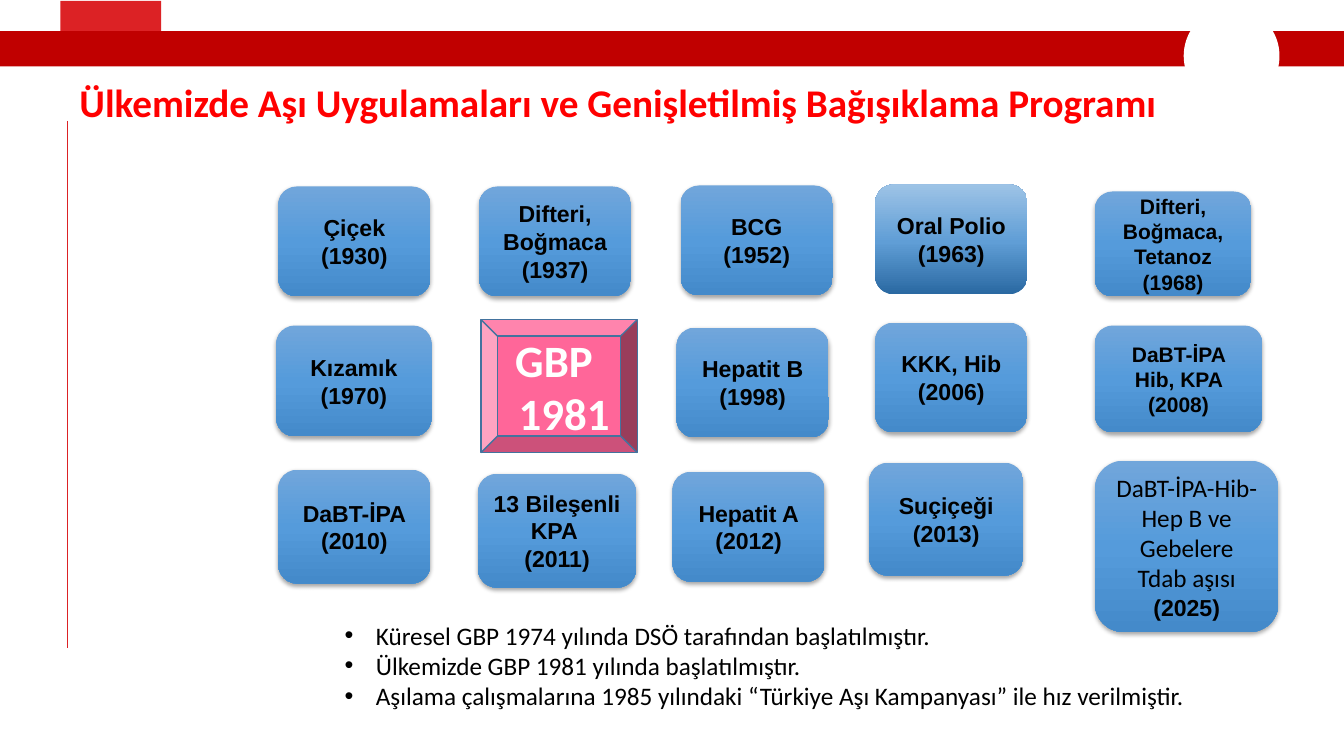
from lxml import etree
from pptx import Presentation
from pptx.dml.color import RGBColor
from pptx.enum.shapes import MSO_CONNECTOR as LINE, MSO_SHAPE as GEOM
from pptx.enum.text import MSO_ANCHOR as ANCHOR, MSO_AUTO_SIZE as AUTO, PP_ALIGN as ALIGN
from pptx.oxml import parse_xml
from pptx.oxml.ns import nsdecls, qn
from pptx.util import Emu, Pt

SCALE = 9144  # 100 px to the inch
SIZE = (1333, 750)

TITLE = "Ülkemizde Aşı Uygulamaları ve Genişletilmiş Bağışıklama Programı"
NOTES = [
    "Küresel GBP 1974 yılında DSÖ tarafından başlatılmıştır.",
    "Ülkemizde GBP 1981 yılında başlatılmıştır.",
    "Aşılama çalışmalarına 1985 yılındaki “Türkiye Aşı Kampanyası” ile hız verilmiştir.",
]
BANDS = [
    (GEOM.RECTANGLE, (60, 1, 100, 54), "DC2225"),
    (GEOM.RECTANGLE, (0, 31, 1333, 35), "C00000"),
    (GEOM.OVAL, (1174, 7, 95, 97), "FFFFFF"),
]

STYLES = {
    "card": dict(size=Pt(16.5), name="Arial", bold=True),
    "small": dict(size=Pt(15), name="Arial", bold=True),
    "plain": dict(size=Pt(18), name="Calibri", bold=False),
    "start": dict(size=Pt(32), name="Calibri", bold=True),
    "title": dict(size=Pt(28), name="Calibri", bold=True),
}
BLUE = ([(0, "71A6DB"), (50, "559BDB"), (100, "448ACA")], 90)
DEEP = ([(0, "2A69A2"), (48, "609ED6"), (100, "9DC3E6")], 270)

# place, text lines, style of each line
CARDS = [
    ((276, 185, 151, 109), ["Çiçek", "(1930)"], ["card"] * 2),
    ((475, 185, 151, 109), ["Difteri, Boğmaca", "(1937)"], ["card"] * 2),
    ((675, 184, 151, 109), ["BCG", "(1952)"], ["card"] * 2),
    ((868, 183, 151, 109), ["Oral Polio", "(1963)"], ["card"] * 2),
    ((1086, 190, 155, 104), ["Difteri, Boğmaca, Tetanoz", "(1968)"], ["small"] * 2),
    ((274, 323, 154, 110), ["Kızamık", "(1970)"], ["card"] * 2),
    ((671, 325, 151, 109), ["Hepatit B", "(1998)"], ["card"] * 2),
    ((868, 320, 151, 109), ["KKK, Hib", "(2006)"], ["card"] * 2),
    ((1086, 323, 166, 106), ["DaBT-İPA Hib, KPA (2008)"], ["small"]),
    ((276, 466, 151, 113), ["DaBT-İPA", "(2010)"], ["card"] * 2),
    ((474, 470, 157, 113), ["13 Bileşenli KPA ", "(2011)"], ["card"] * 2),
    ((667, 468, 151, 109), ["Hepatit A", "(2012)"], ["card"] * 2),
    ((862, 459, 153, 112), ["Suçiçeği", "(2013)"], ["card"] * 2),
    ((1086, 457, 182, 170), ["DaBT-İPA-Hib-Hep B ve Gebelere Tdab aşısı", "(2025)"],
     ["plain", "card"]),
]
FLAT = "Oral Polio"  # the one card with its own fill and no shadow


def px(*vals):
    return [Emu(v * SCALE) for v in vals]


def color(code):
    return RGBColor.from_string(code)


def write(frame, lines, styles, ink, align=ALIGN.CENTER, bullet=False):
    frame.word_wrap = True
    for i, (line, style) in enumerate(zip(lines, styles)):
        para = frame.paragraphs[0] if i == 0 else frame.add_paragraph()
        para.alignment = align
        if bullet:
            props = para._p.get_or_add_pPr()
            props.set("marL", str(31 * SCALE))
            props.set("indent", str(-31 * SCALE))
            etree.SubElement(props, qn("a:buFont")).set("typeface", "Arial")
            etree.SubElement(props, qn("a:buChar")).set("char", "•")
        run = para.add_run()
        run.text = line
        for key, val in STYLES[style].items():
            setattr(run.font, key, val)
        run.font.color.rgb = color(ink)


def shape(geom, place, fill=None):
    item = slide.shapes.add_shape(geom, *px(*place))
    item.shadow.inherit = False
    item.line.fill.background()
    if fill:
        item.fill.solid()
        item.fill.fore_color.rgb = color(fill)
    else:
        item.fill.background()
    return item


def blend(item, stops, angle):
    """Give the shape a gradient of any number of stops."""
    marks = "".join(
        f'<a:gs pos="{pos * 1000}"><a:srgbClr val="{code}"/></a:gs>' for pos, code in stops)
    grad = parse_xml(
        f'<a:gradFill {nsdecls("a")} rotWithShape="1"><a:gsLst>{marks}</a:gsLst>'
        f'<a:lin ang="{angle * 60000}" scaled="0"/></a:gradFill>')
    props = item._element.spPr
    props.replace(props.find(qn("a:noFill")), grad)


def shade(item):
    """Give the shape a soft shadow below it."""
    item._element.spPr.find(qn("a:effectLst")).append(parse_xml(
        f'<a:outerShdw {nsdecls("a")} blurRad="40000" dist="23000" dir="5400000" '
        'rotWithShape="0"><a:srgbClr val="000000"><a:alpha val="35000"/></a:srgbClr>'
        '</a:outerShdw>'))


def label(place, lines, style, ink, bullet=False):
    box = slide.shapes.add_textbox(*px(*place))
    write(box.text_frame, lines, [style] * len(lines), ink, ALIGN.LEFT, bullet)
    box.text_frame.auto_size = AUTO.SHAPE_TO_FIT_TEXT
    return box.text_frame


deck = Presentation()
deck.slide_width, deck.slide_height = px(*SIZE)
slide = deck.slides.add_slide(deck.slide_layouts[6])

rule = slide.shapes.add_connector(LINE.STRAIGHT, *px(67, 120, 67, 643))
rule.line.color.rgb = color("DC2225")
rule.line.width = Pt(1)
etree.SubElement(rule._element.spPr, qn("a:effectLst"))

for geom, place, fill in BANDS:
    shape(geom, place, fill)

for place, lines, styles in CARDS:
    card = shape(GEOM.ROUNDED_RECTANGLE, place)
    if lines[0] == FLAT:
        blend(card, *DEEP)
    else:
        blend(card, *BLUE)
        shade(card)
    card.text_frame.vertical_anchor = ANCHOR.MIDDLE
    write(card.text_frame, lines, styles, "000000")

start = shape(GEOM.BEVEL, (477, 317, 155, 132), "FF6699")
start.line.color.rgb = color("43739E")
start.line.width = Pt(1)
start.text_frame.vertical_anchor = ANCHOR.MIDDLE
write(start.text_frame, ["GBP ", " 1981"], ["start"] * 2, "FFFFFF")

label((332, 610, 869, 101), NOTES, "plain", "000000", bullet=True)
head = label((69, 77, 1213, 53), [TITLE], "title", "FF0000")
head.vertical_anchor = ANCHOR.MIDDLE
head.paragraphs[0].line_spacing = 0.9

deck.save("out.pptx")
